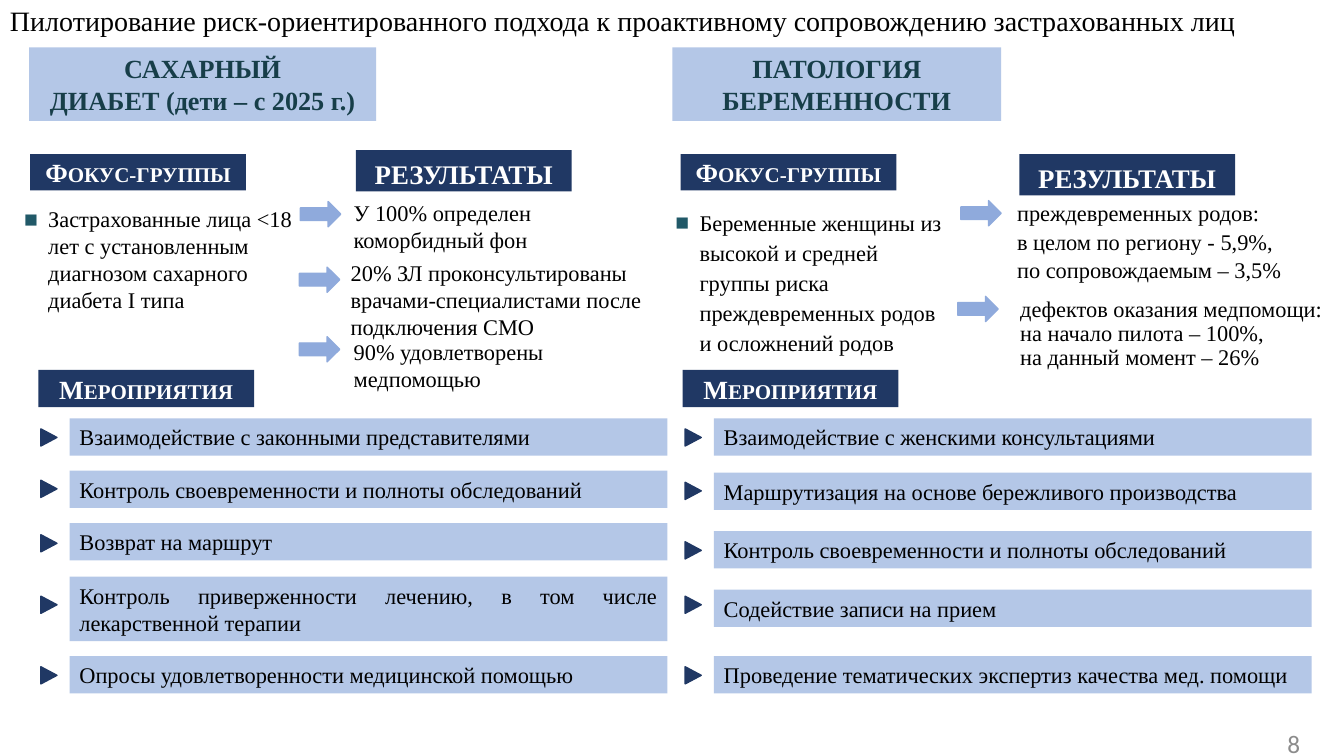
"""Build the slide on piloting a risk-oriented approach to patient support."""
from dataclasses import dataclass

from lxml import etree
from pptx import Presentation
from pptx.dml.color import RGBColor
from pptx.enum.shapes import MSO_SHAPE
from pptx.enum.text import MSO_ANCHOR, PP_ALIGN
from pptx.oxml.ns import qn
from pptx.util import Pt

EMU_PER_PX = 9144
RECTANGLE = MSO_SHAPE.RECTANGLE
ARROW = MSO_SHAPE.RIGHT_ARROW
TRIANGLE = MSO_SHAPE.ISOSCELES_TRIANGLE
TOP, MIDDLE = MSO_ANCHOR.TOP, MSO_ANCHOR.MIDDLE
LEFT, CENTER, JUSTIFY = PP_ALIGN.LEFT, PP_ALIGN.CENTER, PP_ALIGN.JUSTIFY


@dataclass(frozen=True)
class Theme:
    font: str = "Times New Roman"
    number_font: str = "Calibri"
    pale: str = "B4C7E7"
    navy: str = "203864"
    arrow: str = "8FAADC"
    heading: str = "173E49"
    bullet: str = "215968"
    ink: str = "000000"
    white: str = "FFFFFF"
    grey: str = "8C8C8C"
    body_size: float = 16
    number_size: float = 18
    heading_size: float = 18.7
    title_size: float = 20
    results_size: float = 24


@dataclass(frozen=True)
class Box:
    left: int
    top: int
    width: int
    height: int

    def emu(self) -> tuple:
        return tuple(side * EMU_PER_PX for side in (self.left, self.top, self.width, self.height))


@dataclass(frozen=True)
class Result:
    text: str
    box: Box
    arrow_left: int
    arrow_top: int
    spacing: object = None


@dataclass(frozen=True)
class Activity:
    text: str
    top: int
    marker_top: int
    height: int = 37


@dataclass(frozen=True)
class Topic:
    heading: str
    heading_box: Box
    focus: str
    focus_box: Box
    focus_spacing: object
    focus_label: Box
    results_label: Box
    results: tuple
    activities_left: int
    activities: tuple


THEME = Theme()

TOPICS = (
    Topic(
        "САХАРНЫЙ\nДИАБЕТ (дети – с 2025 г.)", Box(29, 47, 344, 73),
        "Застрахованные лица <18 лет с установленным диагнозом сахарного диабета I типа",
        Box(13, 199, 291, 118), None,
        Box(30, 153, 214, 36), Box(353, 149, 214, 41),
        (
            Result("У 100% определен коморбидный фон", Box(341, 193, 317, 64), 298, 200),
            Result("20% ЗЛ проконсультированы врачами-специалистами после подключения СМО",
                   Box(338, 252, 333, 91), 297, 265),
            Result("90% удовлетворены медпомощью", Box(341, 331, 299, 64), 297, 334),
        ),
        38,
        (
            Activity("Взаимодействие с законными представителями", 415, 426),
            Activity("Контроль своевременности и полноты обследований", 467, 477),
            Activity("Возврат на маршрут", 519, 531),
            Activity("Контроль приверженности лечению, в том числе лекарственной терапии",
                     572, 592, 64),
            Activity("Опросы удовлетворенности медицинской помощью", 651, 662),
        ),
    ),
    Topic(
        "ПАТОЛОГИЯ БЕРЕМЕННОСТИ", Box(667, 47, 326, 73),
        "Беременные женщины из высокой и средней группы риска преждевременных родов "
        "и осложнений родов",
        Box(659, 200, 291, 157), Pt(21.3),
        Box(675, 153, 214, 36), Box(1011, 153, 214, 41),
        (
            Result("преждевременных родов:\nв целом по региону - 5,9%,\nпо сопровождаемым – 3,5%",
                   Box(999, 192, 340, 94), 953, 199, Pt(20)),
            Result("дефектов оказания медпомощи:\nна начало пилота – 100%,\nна данный момент – 26%",
                   Box(1002, 290, 333, 82), 950, 294, Pt(17.3)),
        ),
        677,
        (
            Activity("Взаимодействие с женскими консультациями", 415, 426),
            Activity("Маршрутизация на основе бережливого производства", 469, 479),
            Activity("Контроль своевременности и полноты обследований", 527, 538),
            Activity("Содействие записи на прием", 585, 592),
            Activity("Проведение тематических экспертиз качества мед. помощи", 651, 662),
        ),
    ),
)


def write_text(shape, text: str, *, size: float = THEME.body_size, color: str = THEME.ink,
               font: str = THEME.font, bold: bool = False, small_caps: bool = False,
               align=LEFT, anchor=TOP, spacing=None):
    frame = shape.text_frame
    frame.word_wrap = True
    frame.vertical_anchor = anchor
    paragraph = frame.paragraphs[0]
    paragraph.text = text
    paragraph.alignment = align
    if spacing is not None:
        paragraph.line_spacing = spacing
    for run in paragraph.runs:
        run.font.name = font
        run.font.size = Pt(size)
        run.font.bold = bold
        run.font.color.rgb = RGBColor.from_string(color)
        if small_caps:
            run.font._element.set("cap", "small")
    return paragraph


def add_text(slide, box: Box, text: str, **text_format):
    return write_text(slide.shapes.add_textbox(*box.emu()), text, **text_format)


def add_filled(slide, kind, box: Box, fill: str, outlined: bool = False):
    shape = slide.shapes.add_shape(kind, *box.emu())
    shape.shadow.inherit = False
    shape.fill.solid()
    shape.fill.fore_color.rgb = RGBColor.from_string(fill)
    if outlined:
        shape.line.color.rgb = RGBColor.from_string(fill)
        shape.line.width = Pt(1)
    else:
        shape.line.fill.background()
    return shape


def add_label(slide, box: Box, text: str, size: float = THEME.heading_size) -> None:
    write_text(add_filled(slide, RECTANGLE, box, THEME.navy), text, size=size,
               color=THEME.white, bold=True, small_caps=True, align=CENTER, anchor=MIDDLE)


def add_bullet(paragraph) -> None:
    properties = paragraph._p.get_or_add_pPr()
    properties.set("marL", str(25 * EMU_PER_PX))
    properties.set("indent", str(-25 * EMU_PER_PX))
    color = etree.SubElement(properties, qn("a:buClr"))
    etree.SubElement(color, qn("a:srgbClr"), val=THEME.bullet)
    etree.SubElement(properties, qn("a:buSzPct"), val="200000")
    etree.SubElement(properties, qn("a:buFont"), typeface=THEME.font)
    etree.SubElement(properties, qn("a:buChar"), char="▪")


def add_activity(slide, left: int, activity: Activity) -> None:
    bar = add_filled(slide, RECTANGLE, Box(left + 31, activity.top, 593, activity.height), THEME.pale)
    write_text(bar, activity.text, align=JUSTIFY, anchor=MIDDLE)
    marker = add_filled(slide, TRIANGLE, Box(left + 2, activity.marker_top, 17, 16), THEME.navy, True)
    marker.rotation = 90


def add_topic(slide, topic: Topic) -> None:
    heading = add_filled(slide, RECTANGLE, topic.heading_box, THEME.pale)
    write_text(heading, topic.heading, size=THEME.heading_size, color=THEME.heading,
               bold=True, align=CENTER, anchor=MIDDLE)
    add_bullet(add_text(slide, topic.focus_box, topic.focus, spacing=topic.focus_spacing))
    add_label(slide, topic.focus_label, "Фокус-группы")
    add_label(slide, topic.results_label, "результаты", THEME.results_size)
    for result in topic.results:
        add_filled(slide, ARROW, Box(result.arrow_left, result.arrow_top, 40, 25), THEME.arrow, True)
        add_text(slide, result.box, result.text, spacing=result.spacing)
    add_label(slide, Box(topic.activities_left, 367, 214, 37), "Мероприятия")
    for activity in topic.activities:
        add_activity(slide, topic.activities_left, activity)


def main() -> None:
    presentation = Presentation()
    presentation.slide_width = 1333 * EMU_PER_PX
    presentation.slide_height = 750 * EMU_PER_PX
    slide = presentation.slides.add_slide(presentation.slide_layouts[6])
    add_text(slide, Box(0, 5, 1297, 47),
             "Пилотирование риск-ориентированного подхода к проактивному "
             "сопровождению застрахованных лиц", size=THEME.title_size, spacing=0.8)
    for topic in TOPICS:
        add_topic(slide, topic)
    add_text(slide, Box(1267, 718, 67, 40), "8", size=THEME.number_size,
             color=THEME.grey, font=THEME.number_font, anchor=MIDDLE)
    presentation.save("out.pptx")


if __name__ == "__main__":
    main()
